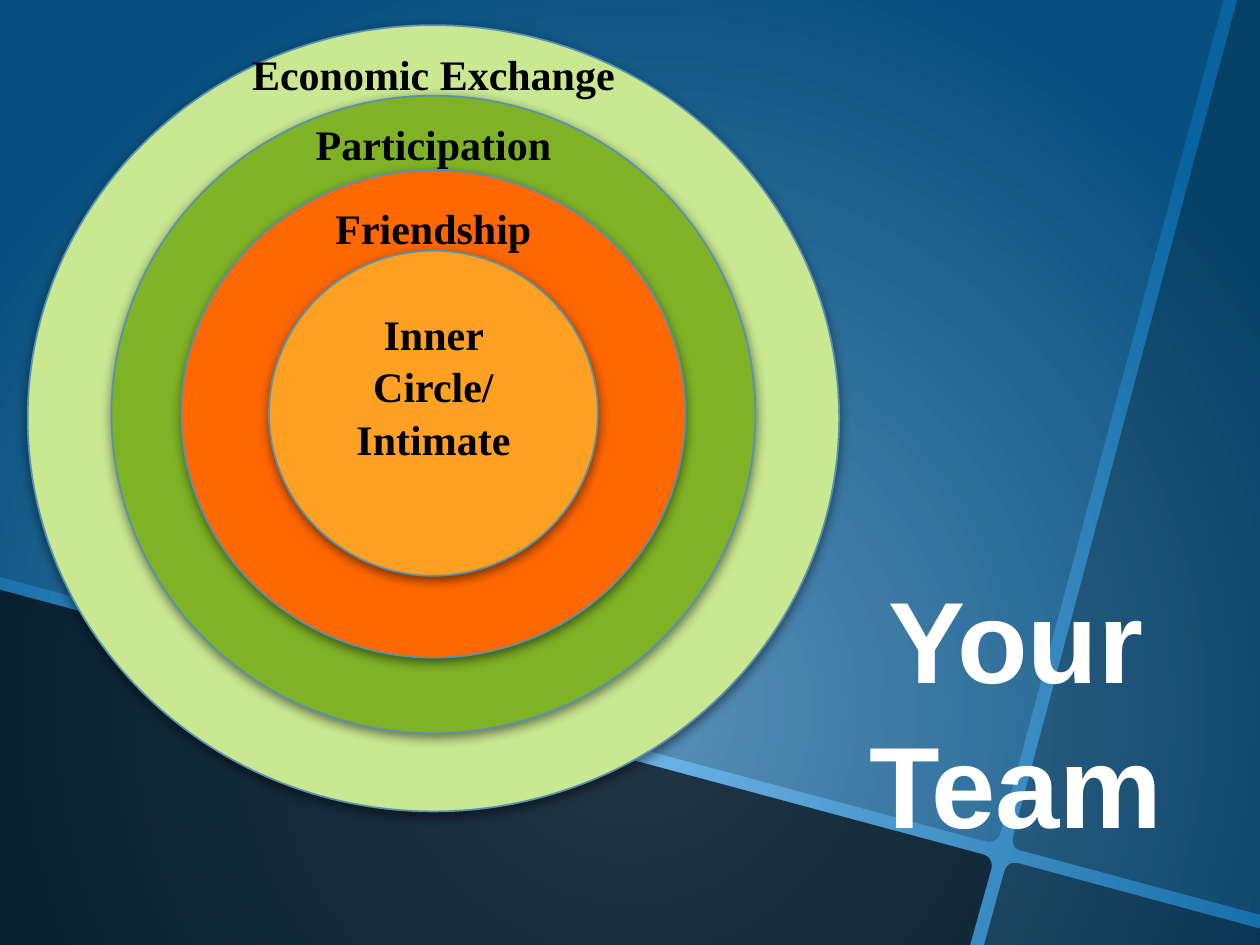
from dataclasses import dataclass

import pptx
import pptx.dml.color
import pptx.enum.shapes
import pptx.enum.text
import pptx.oxml
import pptx.oxml.ns
import pptx.util
from lxml import etree

Inches = pptx.util.Inches
Pt = pptx.util.Pt
qn = pptx.oxml.ns.qn


@dataclass(frozen=True)
class Theme:
    """Colours, fonts and type sizes of the slide."""
    glow: str = "70B6E8"
    deep: str = "08639E"
    shade: str = "000000"
    outline: str = "5792B1"
    label: str = "000000"
    title: str = "FFFFFF"
    label_font: str = "Times New Roman"
    title_font: str = "Arial"
    label_size: int = 24
    title_size: int = 66


THEME = Theme()
CENTRE_X = 3.44

RINGS = [
    (0.2, 6.44, 6.24, "C9E891"),
    (0.76, 5.11, 5.06, "80B226"),
    (1.35, 4, 3.87, "FF6700"),
    (1.99, 2.61, 2.58, "FEA022"),
]

RING_LABELS = [
    ("Friendship", 1.54, 1.77),
    ("Participation", 0.87, 2.09),
    ("Economic Exchange", 0.32, 3.11),
]

PANELS = [
    (20, [(0, 0), (9.71, 0), (7.94, 6.61),
          (7.93, 6.66, 7.88, 6.69, 7.83, 6.68), (0, 4.58)]),
    (70, [(0, 4.68), (7.8, 6.78), (7.85, 6.79, 7.88, 6.84, 7.87, 6.89),
          (7.7, 7.5), (0, 7.5)]),
    (50, [(8.04, 6.85), (8.05, 6.85, 8.07, 6.85, 8.08, 6.85), (10, 7.37),
          (10, 7.5), (7.81, 7.5), (7.97, 6.92),
          (7.98, 6.88, 8.01, 6.85, 8.04, 6.85)]),
    (35, [(9.82, 0), (10, 0), (10, 7.26), (8.1, 6.75),
          (8.05, 6.74, 8.03, 6.69, 8.04, 6.64)]),
]


def rgb(value):
    """Return a colour from its hex digits."""
    return pptx.dml.color.RGBColor.from_string(value)


def add_child(parent, tag, **attributes):
    """Append a drawing element with the given attributes."""
    return etree.SubElement(parent, qn(tag), {k: str(v) for k, v in attributes.items()})


def paint_background(slide):
    """Fill the background with a glow spreading from the lower middle."""
    fill = slide.background.fill
    fill.gradient()
    for stop, colour, position in zip(fill.gradient_stops, (THEME.glow, THEME.deep), (0, 1)):
        stop.color.rgb = rgb(colour)
        stop.position = position
    gradient = slide.element.find(".//" + qn("a:gradFill"))
    gradient.remove(gradient.find(qn("a:lin")))
    glow = add_child(gradient, "a:path", path="circle")
    add_child(glow, "a:fillToRect", l=50000, t=50000, r=50000, b=0)


def flatten(steps, count=6):
    """Turn points and cubic curves into a list of points."""
    points = []
    for step in steps:
        if len(step) == 2:
            points.append(step)
            continue
        corners = [points[-1], step[0:2], step[2:4], step[4:6]]
        for i in range(1, count + 1):
            t = i / count
            weights = ((1 - t) ** 3, 3 * t * (1 - t) ** 2, 3 * t * t * (1 - t), t ** 3)
            points.append(tuple(sum(w * c[axis] for w, c in zip(weights, corners))
                                for axis in (0, 1)))
    return points


def add_panel(slide, opacity, steps):
    """Add a translucent dark panel of the backdrop."""
    first, *rest = [(Inches(x), Inches(y)) for x, y in flatten(steps)]
    builder = slide.shapes.build_freeform(*first)
    builder.add_line_segments(rest, close=True)
    panel = builder.convert_to_shape()
    panel.fill.solid()
    panel.fill.fore_color.rgb = rgb(THEME.shade)
    add_child(panel.element.spPr.find(".//" + qn("a:srgbClr")), "a:alpha", val=opacity * 1000)
    panel.line.fill.background()
    panel.shadow.inherit = False


def add_ring(group, top, width, height, colour):
    """Add one shadowed ellipse around the common centre line."""
    ring = group.shapes.add_shape(
        pptx.enum.shapes.MSO_SHAPE.OVAL,
        Inches(CENTRE_X - width / 2), Inches(top), Inches(width), Inches(height))
    ring.fill.solid()
    ring.fill.fore_color.rgb = rgb(colour)
    ring.line.color.rgb = rgb(THEME.outline)
    ring.line.width = Pt(1)
    ring.shadow.inherit = False
    shadow = add_child(ring.element.spPr.find(qn("a:effectLst")), "a:outerShdw",
                       blurRad=Pt(6), dist=Pt(2), dir=90 * 60000, rotWithShape=0)
    add_child(add_child(shadow, "a:srgbClr", val=THEME.shade), "a:alpha", val=50000)
    return ring


def write(paragraph, text, font, size, colour):
    """Write one centred bold run."""
    paragraph.alignment = pptx.enum.text.PP_ALIGN.CENTER
    paragraph.line_spacing = 1.05
    run = paragraph.add_run()
    run.text = text
    run.font.name = font
    run.font.size = Pt(size)
    run.font.bold = True
    run.font.color.rgb = rgb(colour)


def write_label(frame, text):
    """Write a ring name into a text frame."""
    write(frame.paragraphs[0], text, THEME.label_font, THEME.label_size, THEME.label)


def add_ring_label(group, text, top, width):
    """Add the name of an outer ring."""
    label = group.shapes.add_textbox(
        Inches(CENTRE_X - width / 2), Inches(top), Inches(width), Inches(0.5))
    label.text_frame.word_wrap = False
    label.text_frame.auto_size = pptx.enum.text.MSO_AUTO_SIZE.SHAPE_TO_FIT_TEXT
    write_label(label.text_frame, text)


def add_circles(slide):
    """Add the nested circles with their names as one group."""
    circles = slide.shapes.add_group_shape()
    for ring in RINGS:
        inner_circle = add_ring(circles, *ring)
    frame = inner_circle.text_frame
    frame.word_wrap = True
    frame.vertical_anchor = pptx.enum.text.MSO_ANCHOR.MIDDLE
    frame.margin_bottom = Inches(0.5)
    write_label(frame, "Inner Circle/ Intimate")
    for label in RING_LABELS:
        add_ring_label(circles, *label)


def place_title(slide, lines):
    """Place the title in front, one paragraph per line."""
    title = slide.shapes.title
    title.left, title.top = Inches(6.66), Inches(4.35)
    title.width, title.height = Inches(2.81), Inches(2.32)
    frame = title.text_frame
    frame.word_wrap = True
    frame.auto_size = pptx.enum.text.MSO_AUTO_SIZE.NONE
    frame.vertical_anchor = pptx.enum.text.MSO_ANCHOR.TOP
    frame.margin_top = Inches(0.1)
    for i, line in enumerate(lines):
        paragraph = frame.add_paragraph() if i else frame.paragraphs[0]
        write(paragraph, line, THEME.title_font, THEME.title_size, THEME.title)
    slide.shapes.element.append(title.element)


def main():
    """Build and save the slide."""
    deck = pptx.Presentation()
    deck.slide_width, deck.slide_height = Inches(10), Inches(7.5)
    slide = deck.slides.add_slide(deck.slide_layouts[5])
    paint_background(slide)
    for panel in PANELS:
        add_panel(slide, *panel)
    add_circles(slide)
    place_title(slide, ["Your", "Team"])
    deck.save("out.pptx")


if __name__ == "__main__":
    main()
